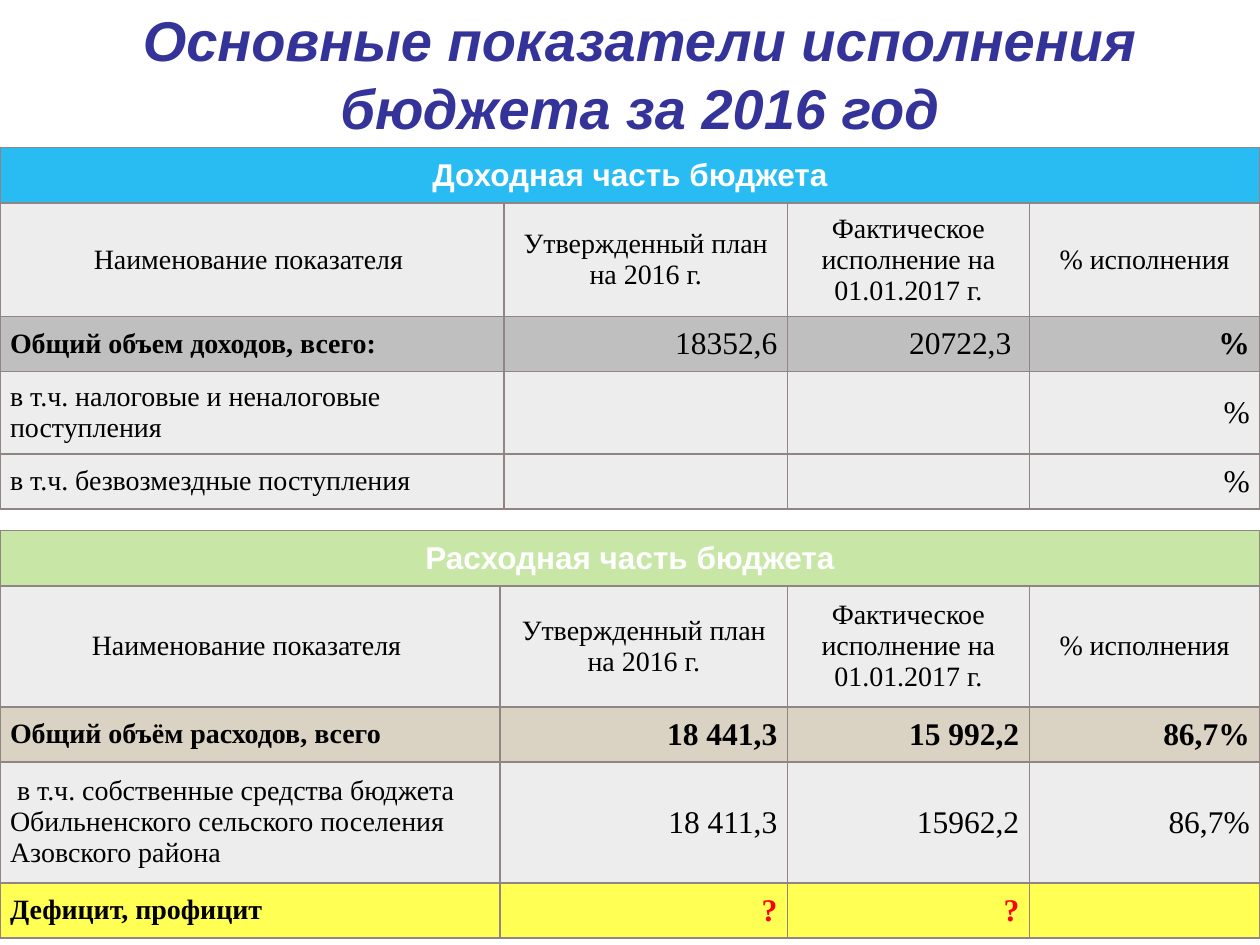
from lxml.etree import SubElement
from pptx import Presentation
from pptx.dml.color import RGBColor
from pptx.enum.text import MSO_ANCHOR, MSO_AUTO_SIZE, PP_ALIGN
from pptx.oxml.ns import qn
from pptx.util import Inches, Pt

NAVY = RGBColor(0x33, 0x33, 0x99)
WHITE = RGBColor(0xFF, 0xFF, 0xFF)
BLACK = RGBColor(0, 0, 0)
RED = RGBColor(0xFF, 0, 0)
BLUE = RGBColor(0, 0xB0, 0xF0)
GREEN = RGBColor(0x92, 0xD0, 0x50)
YELLOW = RGBColor(0xFF, 0xFF, 0)
LIGHT = RGBColor(0xEE, 0xED, 0xED)
GRAY = RGBColor(0xBF, 0xBF, 0xBF)
BEIGE = RGBColor(0xDA, 0xD2, 0xC3)
BORDER = "918485"

TITLE = "Основные показатели исполнения бюджета за 2016 год"
NAME, FACT, PERCENT = ("Наименование показателя ",
                       "Фактическое исполнение на 01.01.2017 г.", "% исполнения")

# Each row: height, fill, opacity in percent, cell texts
INCOME = {
    "top": 1.17,
    "cols": [4, 2.25, 1.92, 1.83],
    "rows": [
        (0.44, BLUE, 84, ["Доходная часть бюджета"]),
        (0.9, LIGHT, 100, [NAME, "Утвержденный план\nна 2016 г.", FACT, PERCENT]),
        (0.43, GRAY, 100, ["Общий объем доходов, всего:", "18352,6", "20722,3 ", "%"]),
        (0.65, LIGHT, 100, ["в т.ч. налоговые и неналоговые поступления", "", "", "%"]),
        (0.43, LIGHT, 100, ["в т.ч. безвозмездные поступления", "", "", "%"]),
    ],
    "bold": {(2, 0), (2, 3)},
    "red": set(),
}
EXPENSES = {
    "top": 4.21,
    "cols": [3.97, 2.28, 1.92, 1.83],
    "rows": [
        (0.44, GREEN, 50, ["Расходная часть бюджета"]),
        (0.96, LIGHT, 100, [NAME, "Утвержденный план на 2016 г.", FACT, PERCENT]),
        (0.43, BEIGE, 100, ["Общий объём расходов, всего", "18 441,3", "15 992,2", "86,7%"]),
        (0.96, LIGHT, 100, [" в т.ч. собственные средства бюджета Обильненского сельского "
                            "поселения Азовского района", "18 411,3", "15962,2", "86,7%"]),
        (0.43, YELLOW, 67, ["Дефицит, профицит", "?", "?", ""]),
    ],
    "bold": {(2, 0), (2, 1), (2, 2), (2, 3), (4, 0), (4, 1), (4, 2)},
    "red": {(4, 1), (4, 2)},
}


def set_font(font, color, **values):
    for key, value in values.items():
        setattr(font, key, value)
    font.color.rgb = color


def add_borders(cell):
    tc_pr = cell._tc.get_or_add_tcPr()
    for side in ("lnL", "lnR", "lnT", "lnB"):
        ln = SubElement(tc_pr, qn(f"a:{side}"), w=str(Pt(1)))
        SubElement(SubElement(ln, qn("a:solidFill")), qn("a:srgbClr"), val=BORDER)


def fill_cell(cell, color, opacity):
    cell.fill.solid()
    cell.fill.fore_color.rgb = color
    if opacity < 100:
        clr = cell._tc.tcPr.find(qn("a:solidFill")).find(qn("a:srgbClr"))
        SubElement(clr, qn("a:alpha"), val=str(opacity * 1000))


def cell_format(data, i, j):
    """Return alignment, colour and font values for row i, column j."""
    if i == 0:
        return PP_ALIGN.CENTER, WHITE, {"name": "Arial", "size": Pt(18), "bold": True}
    is_number = i > 1 and j > 0
    align = PP_ALIGN.CENTER if i == 1 else PP_ALIGN.RIGHT if is_number else PP_ALIGN.LEFT
    return align, RED if (i, j) in data["red"] else BLACK, {
        "name": "Times New Roman",
        "size": Pt(18 if is_number else 16),
        "bold": (i, j) in data["bold"],
    }


def add_budget_table(slide, data):
    rows, cols = data["rows"], data["cols"]
    height = sum(row[0] for row in rows)
    table = slide.shapes.add_table(len(rows), len(cols), 0, Inches(data["top"]),
                                   Inches(sum(cols)), Inches(height)).table
    for column, width in zip(table.columns, cols):
        column.width = Inches(width)
    table.cell(0, 0).merge(table.cell(0, len(cols) - 1))
    for i, (row_height, fill, opacity, texts) in enumerate(rows):
        table.rows[i].height = Inches(row_height)
        for j, cell in enumerate(table.rows[i].cells):
            add_borders(cell)
            fill_cell(cell, fill, opacity)
            cell.vertical_anchor = MSO_ANCHOR.MIDDLE
            for side in ("left", "right", "top", "bottom"):
                setattr(cell, f"margin_{side}", Inches(0.08))
            if j >= len(texts):
                continue
            cell.text = texts[j]
            align, color, values = cell_format(data, i, j)
            for p in cell.text_frame.paragraphs:
                p.alignment = align
                set_font(p.font, color, **values)
                for r in p.runs:
                    set_font(r.font, color, **values)


def main():
    prs = Presentation()
    prs.slide_width, prs.slide_height = Inches(10), Inches(7.5)
    slide = prs.slides.add_slide(prs.slide_layouts[5])

    title = slide.shapes.title
    title.left, title.top = Inches(0.58), 0
    title.width, title.height = Inches(9), Inches(1.16)
    tf = title.text_frame
    tf.text = TITLE
    tf.word_wrap = True
    tf.auto_size = MSO_AUTO_SIZE.NONE
    tf.vertical_anchor = MSO_ANCHOR.MIDDLE
    p = tf.paragraphs[0]
    p.alignment = PP_ALIGN.CENTER
    set_font(p.runs[0].font, NAVY, name="Arial", size=Pt(32), bold=True, italic=True)

    for data in (INCOME, EXPENSES):
        add_budget_table(slide, data)
    prs.save("out.pptx")


if __name__ == "__main__":
    main()
